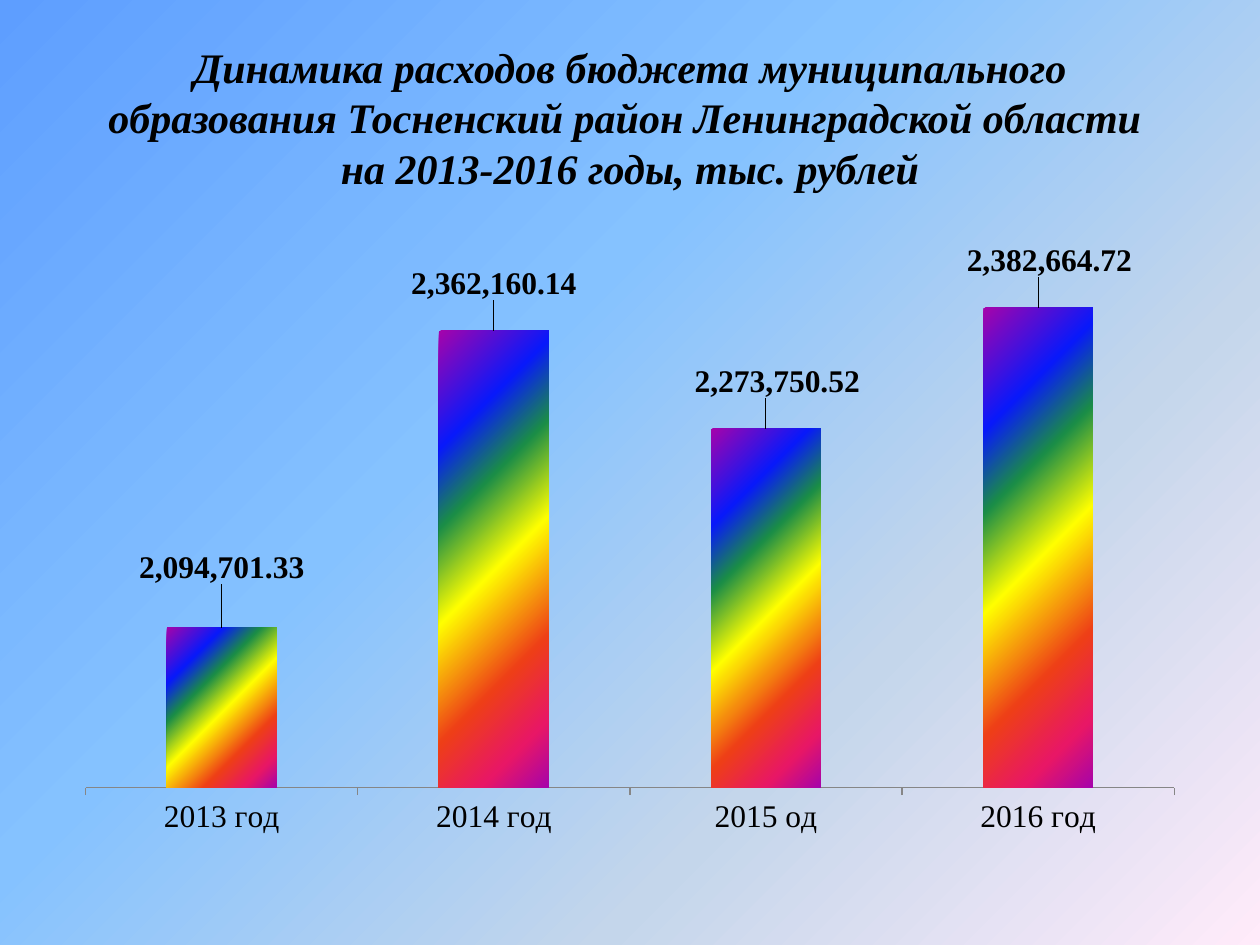
import pptx
import pptx.chart.data
import pptx.dml.color
import pptx.enum.chart
import pptx.enum.text
import pptx.oxml
import pptx.oxml.ns
import pptx.util

RGB = pptx.dml.color.RGBColor
BLACK = RGB(0, 0, 0)
GREY = RGB(0x86, 0x86, 0x86)
SKY = [
    (0, RGB(0x5E, 0x9E, 0xFF)),
    (40, RGB(0x85, 0xC2, 0xFF)),
    (70, RGB(0xC4, 0xD6, 0xEB)),
    (100, RGB(0xFF, 0xEB, 0xFA)),
]
RAINBOW = [
    (0, RGB(0xA6, 0x03, 0xAB)),
    (21, RGB(0x08, 0x19, 0xFB)),
    (35, RGB(0x1A, 0x8D, 0x48)),
    (52, RGB(0xFF, 0xFF, 0x00)),
    (73, RGB(0xEE, 0x3F, 0x17)),
    (88, RGB(0xE8, 0x17, 0x66)),
    (100, RGB(0xA6, 0x03, 0xAB)),
]
FACE = "Times New Roman"
MONEY = "#,##0.00"
SCALE = 914400 // 126


class Deck:
    def __init__(self, wide, high):
        self.prs = pptx.Presentation()
        self.prs.slide_width = pptx.util.Inches(wide)
        self.prs.slide_height = pptx.util.Inches(high)
        self.slide = self.prs.slides.add_slide(self.prs.slide_layouts[5])

    def box(self, *sides):
        return [pptx.util.Emu(side * SCALE) for side in sides]

    def font(self, font, size, bold=False, italic=False):
        font.name = FACE
        font.size = pptx.util.Pt(size)
        font.bold = bold
        font.italic = italic
        font.color.rgb = BLACK

    def node(self, tag, body="", attrs=""):
        names = pptx.oxml.ns.nsdecls("a", "c")
        return pptx.oxml.parse_xml(f"<{tag} {names} {attrs}>{body}</{tag}>")

    def blend(self, fill, root, stops):
        fill.gradient()
        fill.gradient_angle = 315
        body = "".join(
            f'<a:gs pos="{pos * 1000}"><a:srgbClr val="{tone}"/></a:gs>'
            for pos, tone in stops
        )
        old = root.find(".//" + pptx.oxml.ns.qn("a:gsLst"))
        old.getparent().replace(old, self.node("a:gsLst", body))

    def ground(self, stops):
        fill = self.slide.background.fill
        self.blend(fill, self.slide.element, stops)

    def title(self, text, *sides):
        shape = self.slide.shapes.title
        shape.left, shape.top, shape.width, shape.height = self.box(*sides)
        frame = shape.text_frame
        frame.word_wrap = True
        frame.vertical_anchor = pptx.enum.text.MSO_ANCHOR.MIDDLE
        frame.text = text
        para = frame.paragraphs[0]
        para.alignment = pptx.enum.text.PP_ALIGN.CENTER
        for run in para.runs:
            self.font(run.font, 24, True, True)

    def layout(self, **parts):
        body = "".join(f'<c:{key} val="{val}"/>' for key, val in parts.items())
        return self.node("c:layout", f"<c:manualLayout>{body}</c:manualLayout>")

    def label(self, series, index, shift):
        label = series.points[index].data_label
        self.font(label.font, 18, True)
        label.position = pptx.enum.chart.XL_LABEL_POSITION.OUTSIDE_END
        path = f"c:dLbls/c:dLbl[c:idx/@val='{index}']"
        item = series._element.xpath(path)[0]
        item.insert(1, self.layout(x=shift[0], y=shift[1]))
        attrs = f'formatCode="{MONEY}" sourceLinked="0"'
        item.insert(2, self.node("c:numFmt", attrs=attrs))

    def bars(self, cats, vals, shifts, *sides):
        data = pptx.chart.data.CategoryChartData(number_format=MONEY)
        data.categories = cats
        data.add_series("Series 1", vals)
        kind = pptx.enum.chart.XL_CHART_TYPE.COLUMN_CLUSTERED
        chart = self.slide.shapes.add_chart(kind, *self.box(*sides), data).chart
        chart.has_legend = False
        chart.has_title = False
        chart.font.name = "Calibri"
        chart.font.size = pptx.util.Pt(18)
        chart.font.color.rgb = BLACK

        axis = chart.value_axis
        axis.minimum_scale = 1950000
        axis.maximum_scale = 2400000
        axis.has_major_gridlines = False
        axis.tick_labels.number_format = MONEY
        axis.tick_labels.number_format_is_linked = False
        axis.visible = False

        base = chart.category_axis
        base.major_tick_mark = pptx.enum.chart.XL_TICK_MARK.OUTSIDE
        base.format.line.color.rgb = GREY
        self.font(base.tick_labels.font, 18)

        plot = chart.plots[0]
        plot.gap_width = 148
        plot.vary_by_categories = False
        series = plot.series[0]
        self.blend(series.format.fill, series._element, RAINBOW)
        labels = series.data_labels
        labels.show_value = True
        labels.number_format = MONEY
        labels.number_format_is_linked = False
        self.font(labels.font, 18, True)
        for index, shift in enumerate(shifts):
            self.label(series, index, shift)

        area = chart._chartSpace.xpath("c:chart/c:plotArea")[0]
        for old in area.xpath("c:layout"):
            area.remove(old)
        area.insert(0, self.layout(
            layoutTarget="inner", xMode="edge", yMode="edge",
            x=0.02, y=0.11, w=0.96, h=0.8,
        ))


def main():
    deck = Deck(10, 7.5)
    deck.ground(SKY)
    deck.title(
        "Динамика расходов бюджета муниципального образования "
        "Тосненский район Ленинградской области \v"
        "на 2013-2016 годы, тыс. рублей",
        63, 38, 1134, 158,
    )
    deck.bars(
        ["2013 год", "2014 год", "2015 од", "2016 год"],
        [2094701.33, 2362160.14, 2273750.52, 2382664.72],
        [(0, -0.06), (0, -0.04), (0.01, -0.04), (0.01, -0.04)],
        63, 220, 1134, 624,
    )
    deck.prs.save("out.pptx")


if __name__ == "__main__":
    main()
